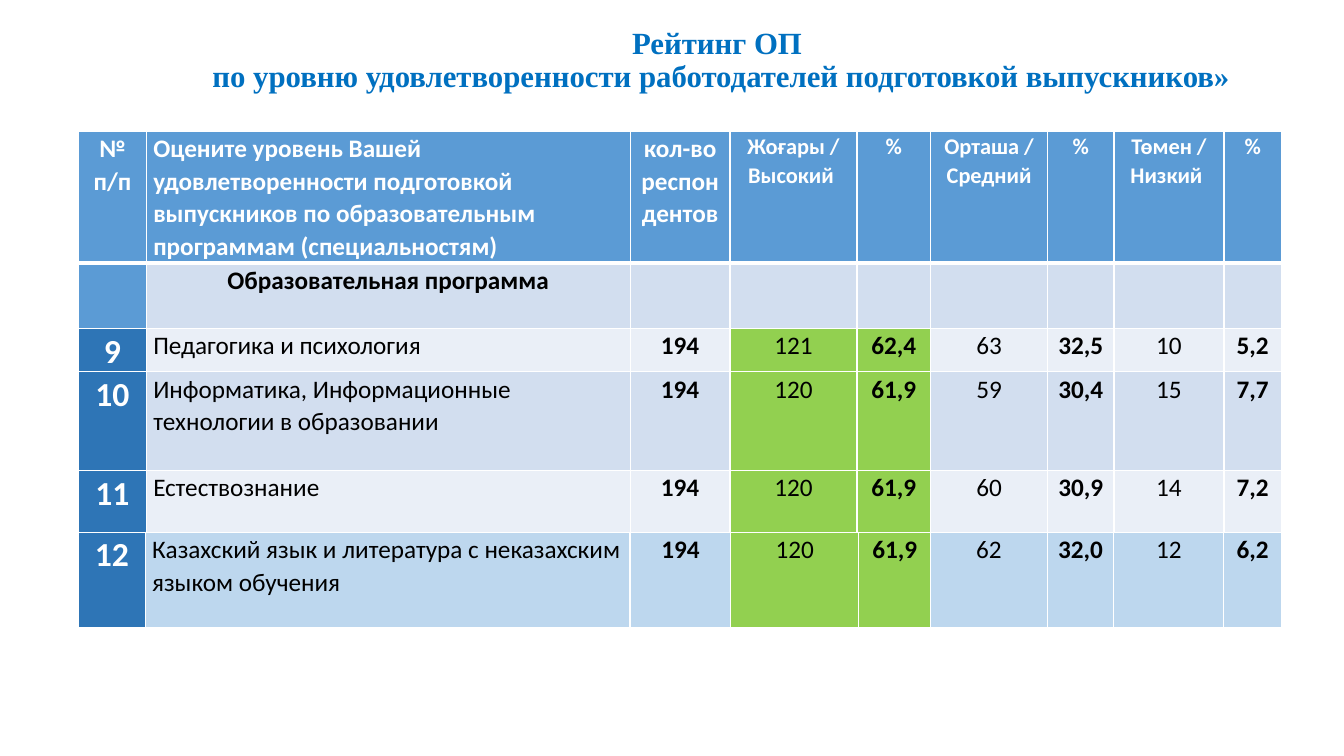
from dataclasses import dataclass

from lxml import etree
from pptx import Presentation
from pptx.dml.color import RGBColor
from pptx.enum.text import MSO_ANCHOR, PP_ALIGN
from pptx.oxml.ns import qn
from pptx.util import Inches, Pt

LEFT, CENTER = PP_ALIGN.LEFT, PP_ALIGN.CENTER
TOP, MIDDLE = MSO_ANCHOR.TOP, MSO_ANCHOR.MIDDLE
BLANK_LAYOUT = 6


@dataclass(frozen=True)
class Theme:
    title_font: str = "Times New Roman"
    table_font: str = "Calibri"
    title_color: str = "0070C0"
    white: str = "FFFFFF"
    black: str = "000000"
    header: str = "5B9BD5"
    number: str = "2E75B6"
    dark_band: str = "D2DEEF"
    light_band: str = "EAEFF7"
    last_band: str = "BDD7EE"
    high: str = "92D050"
    title_size: int = 22
    number_size: int = 24
    body_size: int = 18
    level_size: int = 16
    thin: int = 1
    thick: int = 3


@dataclass(frozen=True)
class CellStyle:
    fill: str
    color: str
    size: int
    bold: bool
    align: int = CENTER
    bottom: int = 1


class SlideBuilder:
    """Places elements by percentages of the slide's width and height."""

    def __init__(self, presentation, theme):
        self.theme = theme
        self.width = presentation.slide_width
        self.height = presentation.slide_height
        self.slide = presentation.slides.add_slide(
            presentation.slide_layouts[BLANK_LAYOUT])

    def across(self, percent):
        return round(self.width * percent / 100)

    def down(self, percent):
        return round(self.height * percent / 100)

    def set_text(self, frame, text, font_name, size, color, bold, align, spacing):
        paragraph = frame.paragraphs[0]
        paragraph.text = text
        paragraph.alignment = align
        paragraph.line_spacing = spacing
        for run in paragraph.runs:
            run.font.name = font_name
            run.font.size = Pt(size)
            run.font.bold = bold
            run.font.color.rgb = RGBColor.from_string(color)

    def title(self, text, left, top, width, height):
        theme = self.theme
        frame = self.slide.shapes.add_textbox(
            self.across(left), self.down(top),
            self.across(width), self.down(height)).text_frame
        frame.word_wrap = True
        frame.vertical_anchor = MIDDLE
        self.set_text(frame, text, theme.title_font, theme.title_size,
                      theme.title_color, True, CENTER, 0.9)

    def borders(self, cell, bottom):
        properties = cell._tc.get_or_add_tcPr()
        for side in "LRTB":
            points = bottom if side == "B" else self.theme.thin
            line = etree.SubElement(properties, qn(f"a:ln{side}"), w=str(Pt(points)))
            fill = etree.SubElement(line, qn("a:solidFill"))
            etree.SubElement(fill, qn("a:srgbClr"), val=self.theme.white)

    def cell(self, cell, text, style):
        self.borders(cell, style.bottom)
        cell.fill.solid()
        cell.fill.fore_color.rgb = RGBColor.from_string(style.fill)
        cell.margin_left = cell.margin_right = Inches(0.07)
        cell.margin_top = cell.margin_bottom = 0
        cell.vertical_anchor = TOP
        if text:
            self.set_text(cell.text_frame, text, self.theme.table_font, style.size,
                          style.color, style.bold, style.align, 1.07)

    def table(self, left, top, columns, heights, rows, style_for):
        """style_for(row, column) gives the CellStyle of each cell."""
        table = self.slide.shapes.add_table(
            len(rows), len(columns), self.across(left), self.down(top),
            self.across(sum(columns)), self.down(sum(heights))).table
        table.first_row = table.horz_banding = False
        for column, width in zip(table.columns, columns):
            column.width = self.across(width)
        for row, height in zip(table.rows, heights):
            row.height = self.down(height)
        for r, texts in enumerate(rows):
            for c, text in enumerate(texts):
                self.cell(table.cell(r, c), text, style_for(r, c))


THEME = Theme()
NUMBER, PROGRAM, RESPONDENTS, HIGH, HIGH_SHARE = range(5)

HEADINGS = ["№ п/п",
            "Оцените уровень Вашей удовлетворенности подготовкой выпускников "
            "по образовательным программам (специальностям)",
            "кол-во респондентов", "Жоғары / Высокий ", "%",
            "Орташа / Средний", "%", "Төмен / Низкий ", "%"]
SECTION = ["", "Образовательная программа"] + [""] * 7
RATINGS = [
    ["9", "Педагогика и психология",
     "194", "121", "62,4", "63", "32,5", "10", "5,2"],
    ["10", "Информатика, Информационные технологии в образовании",
     "194", "120", "61,9", "59", "30,4", "15", "7,7"],
    ["11", "Естествознание",
     "194", "120", "61,9", "60", "30,9", "14", "7,2"],
]
LAST_RATING = ["12", "Казахский язык и литература с неказахским языком обучения",
               "194", "120", "61,9", "62", "32,0", "12", "6,2"]

TABLE_LEFT, TABLE_TOP = 5.85, 17.33
MAIN_COLUMNS = [5.03, 36.01, 7.43, 9.45, 5.48, 8.7, 4.95, 8.18, 4.28]
LAST_COLUMNS = [4.95, 36.08, 7.5, 9.53, 5.33, 8.7, 4.95, 8.18, 4.28]
MAIN_HEIGHTS = [17.47, 8.67, 5.73, 13.07, 8.13]
LAST_HEIGHTS = [12.8]


def rating_style(column, band, bottom=THEME.thin):
    if column == NUMBER:
        return CellStyle(THEME.number, THEME.white, THEME.number_size, True,
                         bottom=bottom)
    fill = THEME.high if column in (HIGH, HIGH_SHARE) else band
    return CellStyle(fill, THEME.black, THEME.body_size,
                     bold=column % 2 == 0,
                     align=LEFT if column == PROGRAM else CENTER,
                     bottom=bottom)


def main_style(row, column):
    if row == 0:
        size = THEME.body_size if column <= RESPONDENTS else THEME.level_size
        return CellStyle(THEME.header, THEME.white, size, True,
                         LEFT if column == PROGRAM else CENTER, THEME.thick)
    if row == 1:
        fill = THEME.header if column == NUMBER else THEME.dark_band
        return CellStyle(fill, THEME.black, THEME.body_size, True)
    return rating_style(column, THEME.dark_band if row % 2 else THEME.light_band)


def last_style(row, column):
    return rating_style(column, THEME.last_band, THEME.thick)


def main():
    presentation = Presentation()
    presentation.slide_width = Inches(13.33)
    presentation.slide_height = Inches(7.5)
    builder = SlideBuilder(presentation, THEME)
    builder.title("Рейтинг ОП \vпо уровню удовлетворенности работодателей "
                  "подготовкой выпускников»", 10.5, 2.4, 86.27, 11.33)
    builder.table(TABLE_LEFT, TABLE_TOP, MAIN_COLUMNS, MAIN_HEIGHTS,
                  [HEADINGS, SECTION, *RATINGS], main_style)
    builder.table(TABLE_LEFT, TABLE_TOP + sum(MAIN_HEIGHTS), LAST_COLUMNS,
                  LAST_HEIGHTS, [LAST_RATING], last_style)
    presentation.save("out.pptx")


if __name__ == "__main__":
    main()
